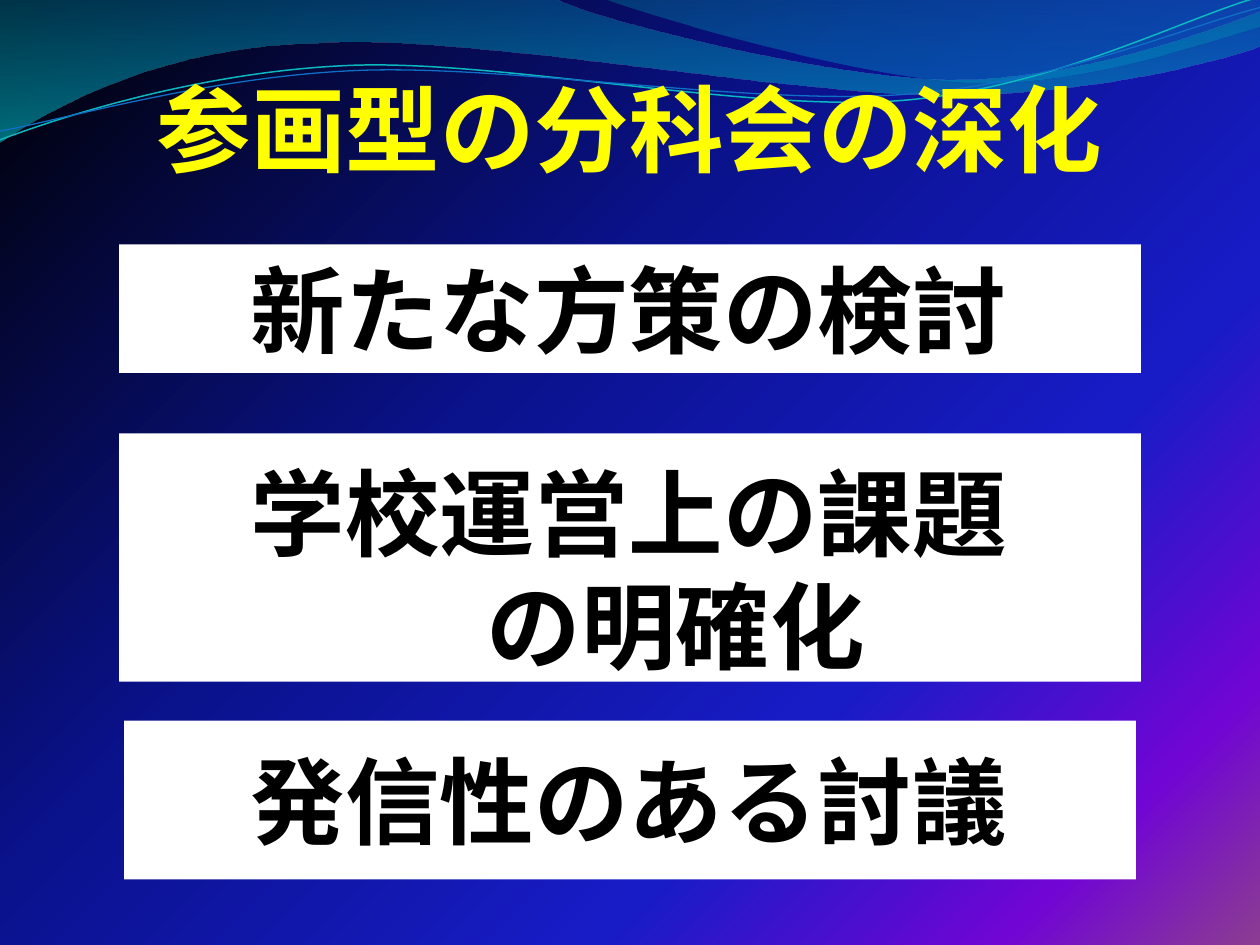
"""Build a slide with a wave backdrop, a heading and three white topic panels."""
import lxml.etree
import pptx
import pptx.dml.color
import pptx.enum.shapes
import pptx.enum.text
import pptx.oxml.ns
import pptx.util

THEME = {
    "font": "Noto Sans CJK JP",
    "size": pptx.util.Pt(54),
    "heading": pptx.dml.color.RGBColor(0xFF, 0xFF, 0x00),
    "text": pptx.dml.color.RGBColor(0x00, 0x00, 0x00),
    "panel": pptx.dml.color.RGBColor(0xFF, 0xFF, 0xFF),
    "backdrop": [(0, "000000", 100), (40, "0A128C", 100), (70, "181CC7", 100),
                 (88, "7005D4", 100), (100, "8C3D91", 100)],
    "wide wave": [(0, "0074A1", 45), (100, "00C6CF", 55)],
    "corner wave": [(0, "00A1A9", 30), (80, "008BBF", 45)],
    "upper thread": pptx.dml.color.RGBColor(0x0A, 0xB8, 0xBF),
    "lower thread": pptx.dml.color.RGBColor(0x0F, 0x6F, 0xC6),
}
qualified = pptx.oxml.ns.qn


def set_gradient(properties, stops, angle):
    """Replace the solid fill of a properties element by a linear gradient."""
    gradient = lxml.etree.Element(qualified("a:gradFill"), rotWithShape="1")
    stop_list = lxml.etree.SubElement(gradient, qualified("a:gsLst"))
    for position, color, opacity in stops:
        stop = lxml.etree.SubElement(stop_list, qualified("a:gs"), pos=str(position * 1000))
        value = lxml.etree.SubElement(stop, qualified("a:srgbClr"), val=color)
        if opacity < 100:
            lxml.etree.SubElement(value, qualified("a:alpha"), val=str(opacity * 1000))
    lxml.etree.SubElement(gradient, qualified("a:lin"), ang=str(angle * 60000), scaled="0")
    properties.replace(properties.find(qualified("a:solidFill")), gradient)


def write_lines(shape, lines, color, anchor):
    """Fill a shape with centred bold lines."""
    frame = shape.text_frame
    frame.word_wrap = True
    frame.auto_size = pptx.enum.text.MSO_AUTO_SIZE.NONE
    frame.vertical_anchor = anchor
    frame.margin_left = frame.margin_top = frame.margin_bottom = 0
    frame.margin_right = pptx.util.Inches(0.02)
    for index, line in enumerate(lines):
        paragraph = frame.add_paragraph() if index else frame.paragraphs[0]
        paragraph.alignment = pptx.enum.text.PP_ALIGN.CENTER
        paragraph.space_before = pptx.util.Pt(0)
        run = paragraph.add_run()
        run.text = line
        run.font.name = THEME["font"]
        run.font.size = THEME["size"]
        run.font.bold = True
        run.font.color.rgb = color
        lxml.etree.SubElement(run.font._element, qualified("a:ea"), typeface=THEME["font"])


presentation = pptx.Presentation()
presentation.slide_width = pptx.util.Inches(10)
presentation.slide_height = pptx.util.Inches(7.5)
column = presentation.slide_width / 10
row = presentation.slide_height / 7.5
slide = presentation.slides.add_slide(presentation.slide_layouts[5])

slide.background.fill.solid()
slide.background.fill.fore_color.rgb = THEME["text"]
set_gradient(slide.element.xpath(".//p:bgPr")[0], THEME["backdrop"], 45)

waves = [
    ("wide wave", None, (0, 0), [
        (4.4, -0.01), (4.76, 0.17, 6.64, 0.63, 7.58, 0.63), (8.53, 0.63, 9.58, 0.26, 10, 0.09),
        (10.01, 0.36), (9.83, 0.44, 8.7, 0.76, 7.46, 0.75), (6.22, 0.75, 3.82, 0.28, 2.57, 0.34),
        (1.29, 0.36, 0.46, 0.83, -0.01, 1.13)]),
    ("corner wave", None, (4.79, -0.01), [
        (5.09, 0.11, 6.82, 0.62, 7.69, 0.65), (8.56, 0.69, 9.61, 0.32, 10, 0.21), (10, 0)]),
    ("upper thread", 0.85, (0, 1.11), [
        (0.48, 0.93, 1.58, 0.57, 2.77, 0.52), (3.95, 0.47, 5.93, 0.89, 7.13, 0.8),
        (8.33, 0.71, 9.38, 0.15, 9.98, -0.02)]),
    ("lower thread", 0.75, (0, 1.04), [
        (0.47, 0.96, 1.64, 0.61, 2.83, 0.56), (4.03, 0.51, 5.97, 0.84, 7.17, 0.75),
        (8.36, 0.67, 9.41, 0.21, 10, 0.06)]),
]
for order, (name, line_width, start, segments) in enumerate(waves):
    points = [(round(segment[index] * column), round(segment[index + 1] * row))
              for segment in segments for index in range(0, len(segment), 2)]
    builder = slide.shapes.build_freeform(round(start[0] * column), round(start[1] * row))
    builder.add_line_segments(points, close=line_width is None)
    wave = builder.convert_to_shape()
    straight_steps = iter(wave.element.xpath(".//a:lnTo"))
    for segment in segments:
        step = next(straight_steps)
        if len(segment) == 6:
            curve = lxml.etree.Element(qualified("a:cubicBezTo"))
            step.addprevious(curve)
            for control in (step, next(straight_steps), next(straight_steps)):
                curve.append(control[0])
                control.getparent().remove(control)
    wave.shadow.inherit = False
    if line_width is None:
        wave.line.fill.background()
        wave.fill.solid()
        set_gradient(wave.element.spPr, THEME[name], 90)
    else:
        wave.fill.background()
        wave.line.color.rgb = THEME[name]
        wave.line.width = pptx.util.Pt(line_width)
    slide.shapes.element.insert(2 + order, wave.element)

heading = slide.shapes.title
heading.left, heading.top = round(0.89 * column), round(0.44 * row)
heading.width, heading.height = round(8.23 * column), round(1.02 * row)
write_lines(heading, ["参画型の分科会の深化"], THEME["heading"], pptx.enum.text.MSO_ANCHOR.BOTTOM)

panels = [
    (1.94, 8.11, 1.02, pptx.enum.text.MSO_ANCHOR.MIDDLE, ["新たな方策の検討"]),
    (3.44, 8.11, 1.97, pptx.enum.text.MSO_ANCHOR.BOTTOM, ["学校運営上の課題", "　の明確化"]),
    (5.72, 8.03, 1.26, pptx.enum.text.MSO_ANCHOR.MIDDLE, ["発信性のある討議"]),
]
for top, width, height, anchor, lines in panels:
    panel = slide.shapes.add_shape(
        pptx.enum.shapes.MSO_SHAPE.RECTANGLE,
        round((10 - width) / 2 * column), round(top * row), round(width * column), round(height * row))
    panel.shadow.inherit = False
    panel.fill.solid()
    panel.fill.fore_color.rgb = THEME["panel"]
    panel.line.fill.background()
    write_lines(panel, lines, THEME["text"], anchor)

presentation.save("out.pptx")
